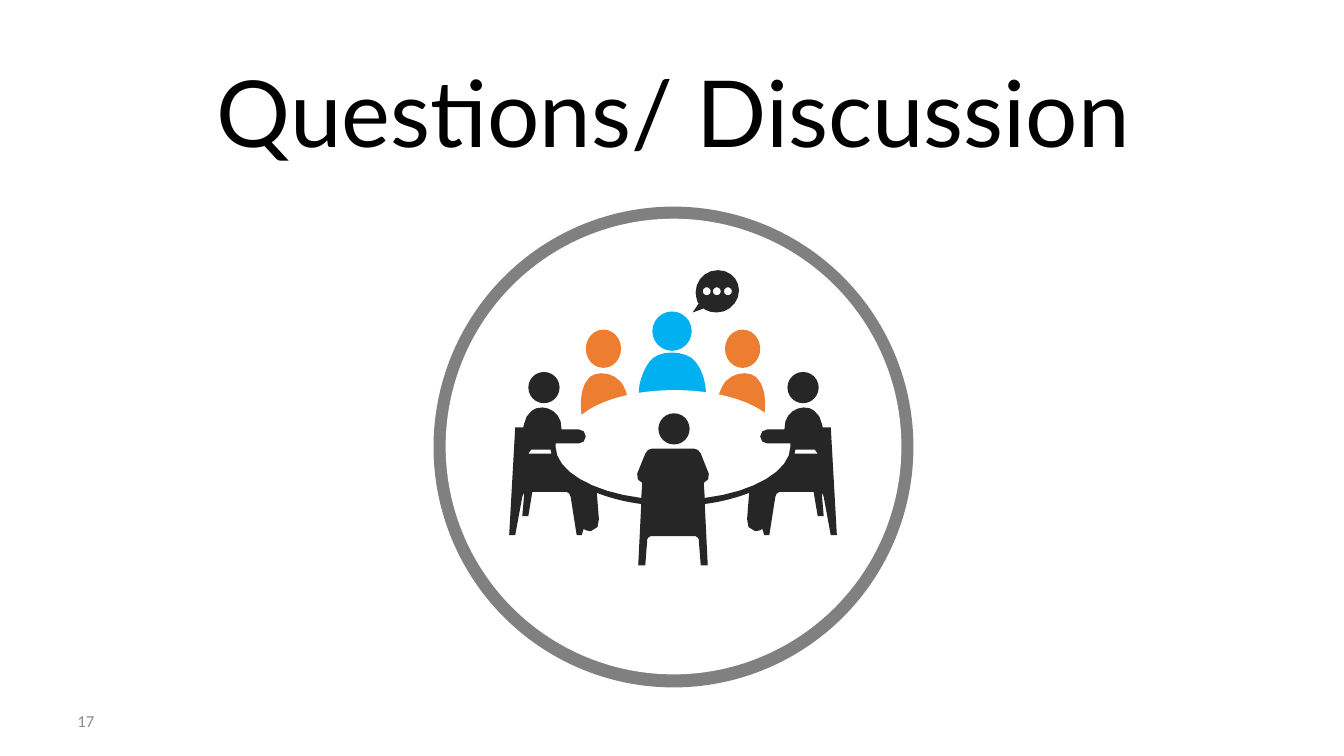
from math import cos, dist, pi, sin
from pptx import Presentation
from pptx.dml.color import RGBColor
from pptx.enum.shapes import MSO_SHAPE
from pptx.enum.text import MSO_ANCHOR, MSO_AUTO_SIZE, PP_ALIGN
from pptx.util import Inches, Pt

COLUMNS, ROWS = 13.33, 7.5
CELL = Inches(1)
MIRROR_SUM = 13.35
DARK, GREY, WHITE = "262626", "808080", "FFFFFF"
BLUE, ORANGE = "00B0F0", "ED7D31"

BUBBLE = [
    (7.12, 2.68), (7.24, 2.68, 7.33, 2.77, 7.33, 2.88),
    (7.33, 3, 7.23, 3.1, 7.11, 3.1), (7.06, 3.1, 7.02, 3.09, 6.99, 3.07),
    (6.98, 3.06), (6.87, 3.1), (6.93, 3.01), (6.92, 3),
    (6.91, 2.97, 6.9, 2.93, 6.9, 2.9), (6.9, 2.78, 7, 2.68, 7.12, 2.68),
]
SPEAKER_BODY = [
    (6.34, 3.92), (6.32, 3.83, 6.39, 3.62, 6.48, 3.55),
    (6.57, 3.48, 6.75, 3.48, 6.86, 3.55), (6.96, 3.63, 7.01, 3.81, 7, 3.92),
]
LISTENER_BODY = [
    (5.77, 4.12), (5.77, 4.12, 5.72, 3.86, 5.85, 3.74),
    (5.93, 3.68, 6.06, 3.69, 6.15, 3.78), (6.21, 3.84, 6.27, 4.05, 6.24, 4.12),
]
FRONT_SHOULDER = [
    (6.47, 4.45), (6.44, 4.45, 6.41, 4.47, 6.4, 4.5), (6.32, 4.7),
    (6.31, 4.74, 6.33, 4.78, 6.37, 4.79), (6.36, 4.94),
]
TABLE_EDGE_AND_ARM = [
    (5.87, 4.88, 5.51, 4.67, 5.51, 4.43), (5.51, 4.4), (5.74, 4.4),
    (5.78, 4.4, 5.81, 4.37, 5.81, 4.33), (5.81, 4.29, 5.78, 4.26, 5.74, 4.26),
    (5.57, 4.26), (5.56, 4.18), (5.53, 4.08, 5.42, 4.02, 5.32, 4.05),
    (5.3, 4.06, 5.28, 4.07, 5.27, 4.08), (5.23, 4.11, 5.21, 4.15, 5.2, 4.2),
]
SIDE_CHAIR = [
    (5.19, 4.24), (5.11, 4.24), (5.05, 5.31), (5.11, 5.31), (5.18, 4.93),
    (5.18, 4.92, 5.19, 4.9, 5.2, 4.89), (5.18, 5.12), (5.24, 5.12),
    (5.28, 4.88), (5.62, 4.88), (5.64, 4.88, 5.66, 4.91, 5.66, 4.93),
    (5.72, 5.31), (5.77, 5.31), (5.79, 5.24),
]
LEG_AND_FRONT_CHAIR = [
    (5.79, 5.25), (5.81, 5.26, 5.83, 5.27, 5.86, 5.27),
    (5.92, 5.26, 5.95, 5.21, 5.94, 5.15), (5.92, 4.89),
    (6.05, 4.94, 6.2, 4.98, 6.36, 5), (6.33, 5.61), (6.4, 5.61),
    (6.42, 5.35), (6.42, 5.34, 6.43, 5.33, 6.45, 5.32),
]
CHAIR_GAP = [(5.24, 4.5), (5.27, 4.46), (5.46, 4.46), (5.47, 4.5)]


def colour(value):
    return RGBColor.from_string(value)


def place(shape, left, top, width, height):
    shape.left, shape.top = int(left * CELL), int(top * CELL)
    shape.width, shape.height = int(width * CELL), int(height * CELL)


def outline(steps):
    points = []
    for step in steps:
        if len(step) == 2:
            points.append(step)
            continue
        corners = [points[-1], step[:2], step[2:4], step[4:]]
        pieces = min(8, max(2, round(dist(corners[0], corners[3]) / 0.06)))
        for piece in range(1, pieces + 1):
            t = piece / pieces
            weights = ((1 - t) ** 3, 3 * t * (1 - t) ** 2, 3 * t * t * (1 - t), t ** 3)
            points.append(tuple(sum(w * corner[axis] for w, corner in zip(weights, corners))
                                for axis in (0, 1)))
    return points


def mirror(points):
    return [(MIRROR_SUM - x, y) for x, y in reversed(points)]


def ring(x, y, radius, count=10):
    return [(x + radius * cos(2 * pi * i / count), y - radius * sin(2 * pi * i / count))
            for i in range(count)]


def paint(shape, fill):
    shape.shadow.inherit = False
    shape.fill.solid()
    shape.fill.fore_color.rgb = colour(fill)
    shape.line.fill.background()


def add_ellipse(group, left, top, width, height, fill):
    shape = group.shapes.add_shape(MSO_SHAPE.OVAL, 0, 0, CELL, CELL)
    place(shape, left, top, width, height)
    paint(shape, fill)


def add_outline(group, contours, fill):
    grids = [[(round(x * CELL), round(y * CELL)) for x, y in contour] for contour in contours]
    builder = group.shapes.build_freeform(*grids[0][0], scale=1.0)
    builder.add_line_segments(grids[0][1:], close=True)
    for grid in grids[1:]:
        builder.move_to(*grid[0])
        builder.add_line_segments(grid[1:], close=True)
    paint(builder.convert_to_shape(), fill)


def write(box, text, font, size, fill):
    frame = box.text_frame
    frame.word_wrap = True
    frame.vertical_anchor = MSO_ANCHOR.MIDDLE
    para = frame.paragraphs[0]
    span = para.add_run()
    span.text = text
    span.font.name = font
    span.font.size = Pt(size)
    span.font.color.rgb = colour(fill)
    return para


def add_title(page):
    box = page.shapes.title
    place(box, 1.29, 1, 10.78, 0.7)
    para = write(box, "Questions/ Discussion", "Lato", 66, "000000")
    para.alignment = PP_ALIGN.CENTER
    para.line_spacing = Pt(43)
    box.text_frame.auto_size = MSO_AUTO_SIZE.SHAPE_TO_FIT_TEXT


def add_page_number(page):
    box = page.shapes.add_textbox(0, 0, CELL, CELL)
    place(box, 0.67, 6.95, 3, 0.4)
    write(box, "17", "Calibri", 12, "8C8C8C")


def add_meeting(page):
    group = page.shapes.add_group_shape()
    add_ellipse(group, 4.3, 2.05, 4.76, 4.77, GREY)
    add_ellipse(group, 4.42, 2.17, 4.52, 4.52, WHITE)
    dots = [ring(x, 2.89, 0.04) for x in (7.01, 7.11, 7.22)]
    add_outline(group, [outline(BUBBLE)] + dots, DARK)

    add_ellipse(group, 6.47, 3.09, 0.39, 0.39, BLUE)
    add_outline(group, [outline(SPEAKER_BODY)], BLUE)
    listener = outline(LISTENER_BODY)
    for left, body in ((5.81, listener), (7.19, mirror(listener))):
        add_ellipse(group, left, 3.27, 0.35, 0.38, ORANGE)
        add_outline(group, [body], ORANGE)

    add_ellipse(group, 5.65, 3.87, 2.08, 0.92, WHITE)
    half = outline(FRONT_SHOULDER + TABLE_EDGE_AND_ARM + SIDE_CHAIR + LEG_AND_FRONT_CHAIR)
    add_outline(group, [half + mirror(half), CHAIR_GAP, mirror(CHAIR_GAP)], DARK)
    for left, top in ((6.53, 4.1), (5.24, 3.69), (7.81, 3.69)):
        add_ellipse(group, left, top, 0.31, 0.31, DARK)


def main():
    deck = Presentation()
    deck.slide_width, deck.slide_height = int(COLUMNS * CELL), int(ROWS * CELL)
    page = deck.slides.add_slide(deck.slide_layouts[5])
    page.background.fill.solid()
    page.background.fill.fore_color.rgb = colour(WHITE)
    add_page_number(page)
    add_title(page)
    add_meeting(page)
    deck.save("out.pptx")


if __name__ == "__main__":
    main()
